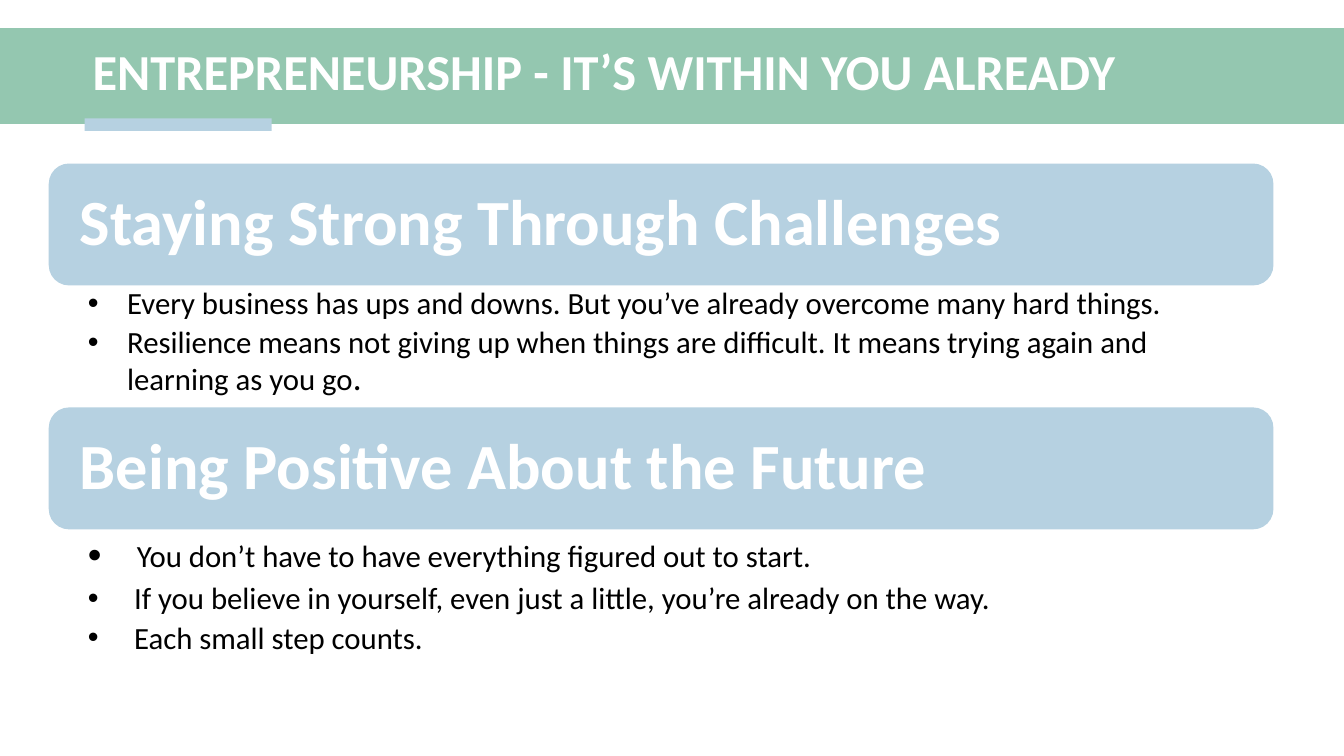
from lxml.etree import SubElement
from pptx import Presentation
from pptx.dml.color import RGBColor
from pptx.enum.shapes import MSO_SHAPE
from pptx.enum.text import MSO_ANCHOR, MSO_AUTO_SIZE, PP_ALIGN
from pptx.oxml.ns import qn
from pptx.util import Pt

COLORS = {"band": "94C7B0", "panel": "B6D1E1", "light": "FFFFFF", "ink": "000000"}
PANEL_LEFT, PANEL_WIDTH, PANEL_HEIGHT = 34.8, 874.8, 87.1

SECTIONS = [
    {
        "top": 116.8,
        "heading": "Staying Strong Through Challenges",
        "inset": 2,
        "bullets": [
            ([("Every business has ups and downs. But you’ve already overcome many hard things.", 22)],
             {"indent": 28, "after": 4}),
            ([("Resilience means not giving up when things are difficult. "
               "It means trying again and learning as you go", 22), (".", 25)],
             {"indent": 28}),
        ],
    },
    {
        "top": 291,
        "heading": "Being Positive About the Future",
        "inset": 8,
        "bullets": [
            ([("You don’t have to have everything figured out to start.", 22)],
             {"indent": 35, "after": 6.5, "bullet_size": 127}),
            ([("If you believe in yourself, even just a little, you’re already on the way.", 22)],
             {"indent": 33, "after": 4.5}),
            ([("Each small step counts.", 22)], {"indent": 33}),
        ],
    },
]


def color(name):
    return RGBColor.from_string(COLORS[name])


def add_block(page, kind, left, top, width, height, fill):
    block = page.shapes.add_shape(kind, Pt(left), Pt(top), Pt(width), Pt(height))
    block.shadow.inherit = False
    block.fill.solid()
    block.fill.fore_color.rgb = color(fill)
    block.line.fill.background()
    return block


def set_frame(box, left, top, right, bottom, anchor):
    frame = box.text_frame
    frame.word_wrap = True
    frame.auto_size = MSO_AUTO_SIZE.NONE
    frame.vertical_anchor = anchor
    frame.margin_left, frame.margin_top = Pt(left), Pt(top)
    frame.margin_right, frame.margin_bottom = Pt(right), Pt(bottom)
    return frame


def add_bullet(para, indent, size):
    properties = para._p.get_or_add_pPr()
    properties.set("marL", str(Pt(indent)))
    properties.set("indent", str(-Pt(indent)))
    SubElement(properties, qn("a:buSzPct"), val=str(size * 1000))
    SubElement(properties, qn("a:buFont"), typeface="Arial")
    SubElement(properties, qn("a:buChar"), char="•")


def write(para, spans, fill="ink", bold=False, indent=None, bullet_size=100, after=0):
    if indent:
        add_bullet(para, indent, bullet_size)
    para.alignment = PP_ALIGN.LEFT
    para.line_spacing = 0.9
    para.space_before = Pt(0)
    para.space_after = Pt(after)
    for text, size in spans:
        span = para.add_run()
        span.text = text
        span.font.name = "Calibri"
        span.font.size = Pt(size)
        span.font.bold = bold
        span.font.color.rgb = color(fill)


def add_title(page, text):
    title = page.shapes.title
    title.element.getparent().append(title.element)
    title.left, title.top, title.width, title.height = Pt(59), Pt(24.5), Pt(859), Pt(57)
    frame = set_frame(title, 7.2, 3.6, 7.2, 3.6, MSO_ANCHOR.MIDDLE)
    write(frame.paragraphs[0], [(text, 36)], fill="light", bold=True)


def add_section(page, top, heading, inset, bullets):
    panel = add_block(page, MSO_SHAPE.ROUNDED_RECTANGLE,
                      PANEL_LEFT, top, PANEL_WIDTH, PANEL_HEIGHT, "panel")
    frame = set_frame(panel, 18, 14, 18, 14, MSO_ANCHOR.MIDDLE)
    write(frame.paragraphs[0], [(heading, 46)], fill="light", bold=True)

    box = page.shapes.add_textbox(Pt(PANEL_LEFT), Pt(top + PANEL_HEIGHT), Pt(PANEL_WIDTH), Pt(87))
    frame = set_frame(box, 28, inset, 14, 2, MSO_ANCHOR.TOP)
    for number, (spans, layout) in enumerate(bullets):
        para = frame.add_paragraph() if number else frame.paragraphs[0]
        write(para, spans, **layout)


def main():
    deck = Presentation()
    deck.slide_width, deck.slide_height = Pt(960), Pt(540)
    page = deck.slides.add_slide(deck.slide_layouts[5])
    add_block(page, MSO_SHAPE.RECTANGLE, 0, 20, 960, 68.5, "band")
    add_block(page, MSO_SHAPE.RECTANGLE, 60.5, 84.5, 133.5, 9, "panel")
    add_title(page, "ENTREPRENEURSHIP - IT’S WITHIN YOU ALREADY")
    for section in SECTIONS:
        add_section(page, **section)
    deck.save("out.pptx")


if __name__ == "__main__":
    main()
